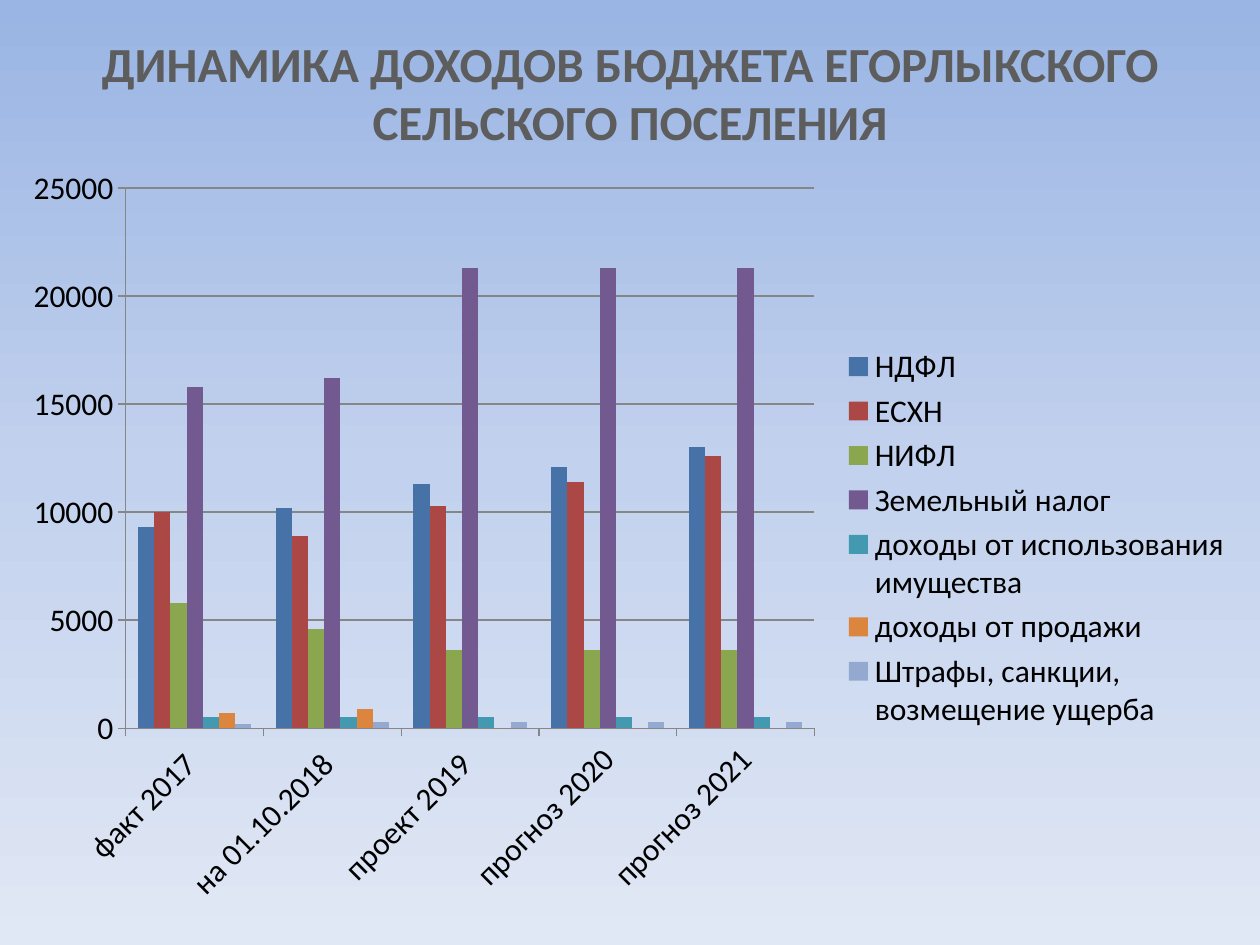
from copy import deepcopy

from lxml.etree import SubElement
from pptx import Presentation
from pptx.chart.data import CategoryChartData
from pptx.dml.color import RGBColor
from pptx.enum.chart import XL_CHART_TYPE, XL_LEGEND_POSITION, XL_TICK_MARK
from pptx.enum.text import MSO_ANCHOR, PP_ALIGN
from pptx.oxml.ns import qn
from pptx.util import Inches, Pt

FONT = "Calibri"
TITLE = "ДИНАМИКА ДОХОДОВ БЮДЖЕТА ЕГОРЛЫКСКОГО СЕЛЬСКОГО ПОСЕЛЕНИЯ"
STOPS = [(0, "9AB5E4"), (0.5, "C2D1ED"), (1, "E1E8F5")]
YEARS = ["факт 2017 ", "на 01.10.2018 ", "проект 2019 ", "прогноз 2020", "прогноз 2021"]
SERIES = [
    ("НДФЛ", "4672A8", [9300, 10200, 11300, 12100, 13000]),
    ("ЕСХН", "AB4744", [10000, 8900, 10300, 11400, 12600]),
    ("НИФЛ", "8AA64F", [5800, 4600, 3600, 3600, 3600]),
    ("Земельный налог", "725990", [15800, 16200, 21300, 21300, 21300]),
    ("доходы от использования имущества", "4299B0", [500, 500, 500, 500, 500]),
    ("доходы от продажи", "DC853E", [700, 900, 0, 0, 0]),
    ("Штрафы, санкции, возмещение ущерба", "93A9CF", [200, 300, 300, 300, 300]),
]


def color(code):
    return RGBColor.from_string(code)


def paint_back(slide):
    fill = slide.background.fill
    fill.gradient()
    fill.gradient_angle = 270
    stops = slide._element.xpath(".//a:gsLst")[0]
    stops.append(deepcopy(stops[-1]))
    for stop, (place, code) in zip(fill.gradient_stops, STOPS):
        stop.position = place
        stop.color.rgb = color(code)


def set_title(slide):
    title = slide.shapes.title
    title.left, title.top = Inches(0.12), Inches(0.21)
    title.width, title.height = Inches(9.76), Inches(1.04)
    frame = title.text_frame
    frame.text = TITLE
    frame.word_wrap = True
    frame.vertical_anchor = MSO_ANCHOR.MIDDLE
    para = frame.paragraphs[0]
    para.alignment = PP_ALIGN.CENTER
    font = para.runs[0].font
    font.name, font.size, font.bold = FONT, Pt(28), True
    font.color.rgb = color("5D5D5D")


def place_plot(chart, **box):
    """Fix the inner plot area, in fractions of the chart frame."""
    area = chart._chartSpace.chart.plotArea
    for old in area.findall(qn("c:layout")):
        area.remove(old)
    layout = SubElement(area, qn("c:layout"))
    area.insert(0, layout)
    manual = SubElement(layout, qn("c:manualLayout"))
    parts = {"layoutTarget": "inner", "xMode": "edge", "yMode": "edge", **box}
    for name, value in parts.items():
        SubElement(manual, qn(f"c:{name}")).set("val", str(value))


def style_axes(chart):
    value, years = chart.value_axis, chart.category_axis
    value.minimum_scale, value.maximum_scale, value.major_unit = 0, 25000, 5000
    value.has_major_gridlines = True
    for axis in (value, years):
        axis.major_tick_mark = XL_TICK_MARK.OUTSIDE
        axis.tick_labels.font.size = Pt(18)
    for line in (value.format.line, years.format.line, value.major_gridlines.format.line):
        line.color.rgb = color("868686")
        line.width = Pt(0.75)
    turn = years._element.find(qn("c:txPr")).find(qn("a:bodyPr"))
    turn.set("rot", str(-45 * 60000))
    turn.set("vert", "horz")


def add_bars(slide):
    data = CategoryChartData()
    data.categories = YEARS
    for name, _, values in SERIES:
        data.add_series(name, values)
    chart = slide.shapes.add_chart(
        XL_CHART_TYPE.COLUMN_CLUSTERED,
        Inches(0.12), Inches(1.25), Inches(9.76), Inches(6.04), data).chart
    chart.font.name, chart.font.size = FONT, Pt(18)
    chart.font.color.rgb = color("000000")
    chart.has_title = False
    chart.has_legend = True
    chart.legend.position = XL_LEGEND_POSITION.RIGHT
    chart.legend.include_in_layout = False
    plot = chart.plots[0]
    plot.gap_width, plot.overlap = 150, 0
    plot.vary_by_categories = False
    for bars, (_, code, _) in zip(plot.series, SERIES):
        bars.format.fill.solid()
        bars.format.fill.fore_color.rgb = color(code)
    style_axes(chart)
    place_plot(chart, x=0.09, y=0.04, w=0.56, h=0.71)


def main():
    deck = Presentation()
    deck.slide_width, deck.slide_height = Inches(10), Inches(7.5)
    slide = deck.slides.add_slide(deck.slide_layouts[5])
    paint_back(slide)
    set_title(slide)
    add_bars(slide)
    deck.save("out.pptx")


if __name__ == "__main__":
    main()
